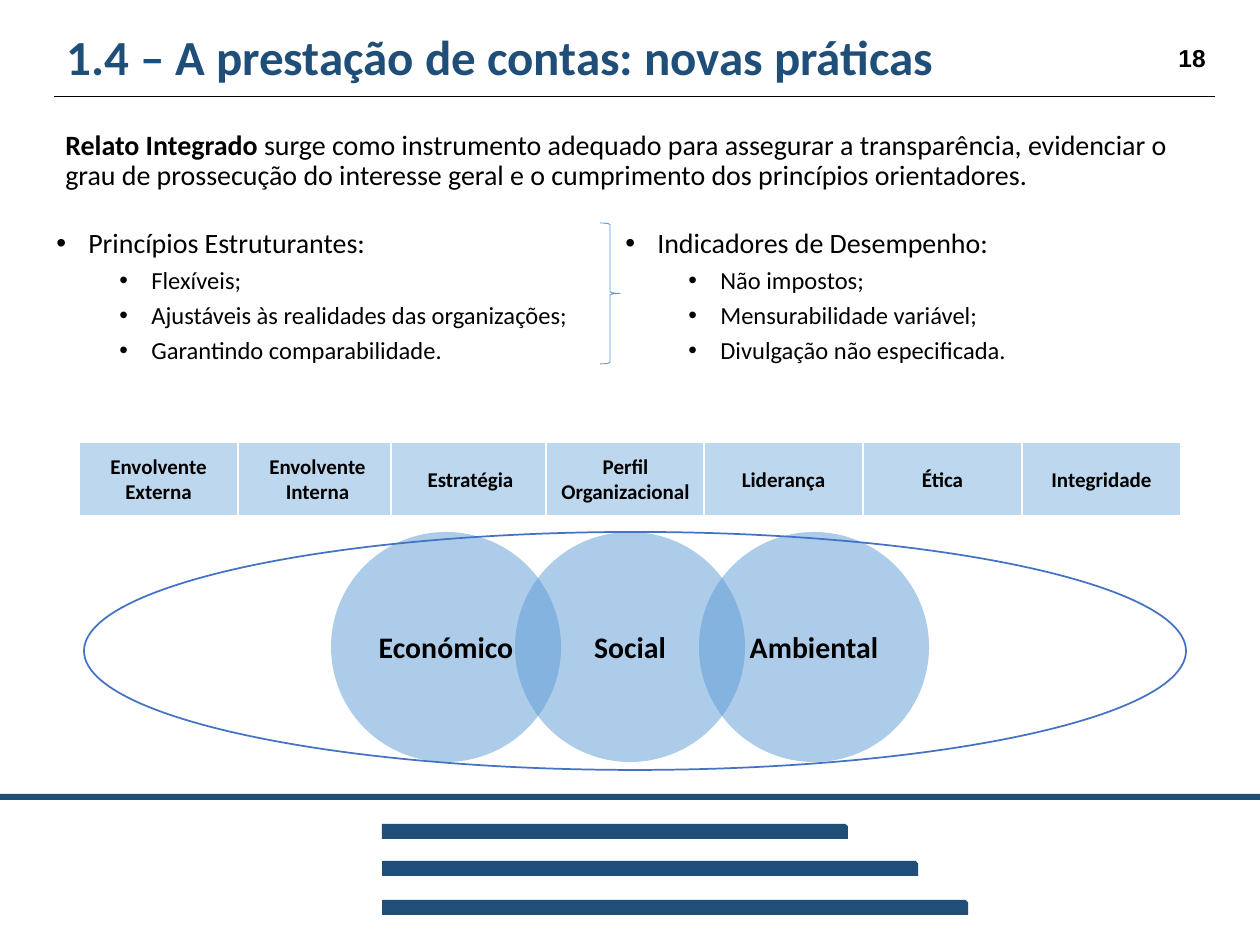
from dataclasses import dataclass

from lxml.etree import SubElement
from pptx import Presentation
from pptx.dml.color import RGBColor as Color
from pptx.enum.shapes import MSO_CONNECTOR as Connector, MSO_SHAPE as Shape
from pptx.enum.text import MSO_ANCHOR as Anchor, PP_ALIGN as Align
from pptx.oxml.ns import qn
from pptx.util import Emu, Pt


@dataclass(frozen=True)
class Theme:
    """Colours, fonts and type sizes of the slide."""
    navy: Color = Color.from_string("1F4E79")
    black: Color = Color.from_string("000000")
    white: Color = Color.from_string("FFFFFF")
    pale: Color = Color.from_string("BDD7EE")
    blue: Color = Color.from_string("5B9BD5")
    outline: Color = Color.from_string("4472C4")
    font: str = "Calibri"
    number_font: str = "Arial"
    title: int = 28
    circle: int = 17
    body: int = 16
    item: int = 14
    cell: int = 12


THEME = Theme()
EMU_PER_PX = 914400 / 126


def px(length):
    """Turn a length in px into EMU."""
    return Emu(round(length * EMU_PER_PX))


def style(paragraph, size, color=THEME.black, bold=None, font=THEME.font):
    """Set the font of a whole paragraph."""
    paragraph.font.name = font
    paragraph.font.size = Pt(size)
    paragraph.font.bold = bold
    paragraph.font.color.rgb = color


def add_shape(slide, kind, box, fill=None, line=None, width=1, alpha=None):
    """Add a preset shape without shadow."""
    shape = slide.shapes.add_shape(kind, *map(px, box))
    shape.shadow.inherit = False
    if fill is None:
        shape.fill.background()
    else:
        shape.fill.solid()
        shape.fill.fore_color.rgb = fill
    if alpha is not None:
        color = shape.fill._xPr.find(qn("a:solidFill"))[0]
        SubElement(color, qn("a:alpha")).set("val", str(alpha * 1000))
    if line is None:
        shape.line.fill.background()
    else:
        shape.line.color.rgb = line
        shape.line.width = Pt(width)
    return shape


def add_label(shape, text, size, wrap=True):
    """Centre a bold label in a shape."""
    frame = shape.text_frame
    frame.word_wrap = wrap
    frame.vertical_anchor = Anchor.MIDDLE
    paragraph = frame.paragraphs[0]
    paragraph.text = text
    paragraph.alignment = Align.CENTER
    style(paragraph, size, bold=True)


def add_text_frame(slide, box):
    """Add a wrapping text box and return its frame."""
    frame = slide.shapes.add_textbox(*map(px, box)).text_frame
    frame.word_wrap = True
    return frame


def add_footer(slide, left, top, width):
    """Draw the bottom band and its three bars."""
    add_shape(slide, Shape.RECTANGLE, (left, top, width, 6), THEME.navy)
    for offset, length in ((30, 466), (67, 536), (106, 586)):
        box = (left + 382, top + offset, length, 15)
        add_shape(slide, Shape.SNIP_1_RECTANGLE, box, THEME.navy)


def add_header(slide, left, top, width, height, title, number):
    """Place the title, the page number and the rule below them."""
    frame = add_text_frame(slide, (left, top, width, height))
    frame.vertical_anchor = Anchor.MIDDLE
    paragraph = frame.paragraphs[0]
    paragraph.text = title
    paragraph.line_spacing = 0.9
    style(paragraph, THEME.title, THEME.navy, True)

    frame = add_text_frame(slide, (left + width - 49, top + 11, 59, 43))
    frame.paragraphs[0].text = number
    style(frame.paragraphs[0], THEME.item, bold=True, font=THEME.number_font)

    ends = (left, top + height + 3, left + width, top + height + 3)
    rule = slide.shapes.add_connector(Connector.STRAIGHT, *map(px, ends))
    rule.line.color.rgb = THEME.black
    rule.line.width = Pt(0.5)
    SubElement(rule._element.spPr, qn("a:effectLst"))


def add_intro(slide, box, lead, text):
    """Place the paragraph with its bold lead."""
    paragraph = add_text_frame(slide, box).paragraphs[0]
    paragraph.line_spacing = 0.9
    style(paragraph, THEME.body)
    paragraph.add_run().text = lead
    paragraph.add_run().text = text
    paragraph.runs[0].font.bold = True


def add_bullets(slide, box, heading, items):
    """Place a bulleted heading with its indented items."""
    frame = add_text_frame(slide, box)
    for index, text in enumerate((heading, *items)):
        paragraph = frame.add_paragraph() if index else frame.paragraphs[0]
        paragraph.text = text
        paragraph.level = 1 if index else 0
        paragraph.line_spacing = 0.9
        paragraph.space_before = Pt(5 if index else 0)
        properties = paragraph._p.get_or_add_pPr()
        properties.set("marL", str(px(95 if index else 32)))
        properties.set("indent", str(px(-32)))
        SubElement(properties, qn("a:buFont")).set("typeface", "Arial")
        SubElement(properties, qn("a:buChar")).set("char", "•")
        style(paragraph, THEME.item if index else THEME.body)


def add_cells(slide, left, top, width, height, cells):
    """Draw the row of labelled cells at their offsets."""
    for offset, text in cells:
        box = (left + offset, top, width, height)
        cell = add_shape(slide, Shape.RECTANGLE, box, THEME.pale, THEME.white, 1.5)
        add_label(cell, text, THEME.cell)


def add_circles(slide, left, top, width, height, labels):
    """Draw overlapping circles centred within a wide ellipse."""
    diameter, pitch = 230, 184
    start = left + 247
    for index, text in enumerate(labels):
        box = (start + index * pitch, top, diameter, diameter)
        circle = add_shape(slide, Shape.OVAL, box, THEME.blue, alpha=50)
        add_label(circle, text, THEME.circle, wrap=False)
    add_shape(slide, Shape.OVAL, (left, top, width, height), line=THEME.outline)


def main():
    """Build and save the slide."""
    presentation = Presentation()
    presentation.slide_width, presentation.slide_height = px(1260), px(945)
    slide = presentation.slides.add_slide(presentation.slide_layouts[6])

    add_footer(slide, 0, 794, 1260)
    add_header(slide, 54, 26, 1161, 67,
               "1.4 – A prestação de contas: novas práticas", "18")
    add_intro(slide, (53, 125, 1162, 80), "Relato Integrado ",
              "surge como instrumento adequado para assegurar a transparência, "
              "evidenciar o grau de prossecução do interesse geral e o "
              "cumprimento dos princípios orientadores.")
    add_bullets(slide, (44, 223, 556, 150), "Princípios Estruturantes:",
                ("Flexíveis;", "Ajustáveis às realidades das organizações;",
                 "Garantindo comparabilidade."))
    add_bullets(slide, (613, 223, 568, 150), "Indicadores de Desempenho:",
                ("Não impostos;", "Mensurabilidade variável;",
                 "Divulgação não especificada."))
    add_shape(slide, Shape.RIGHT_BRACE, (600, 223, 20, 141),
              line=THEME.blue, width=0.5)
    add_cells(slide, 79, 442, 159, 74, (
        (0, "Envolvente Externa"), (159, "Envolvente Interna"),
        (312, "Estratégia"), (467, "Perfil Organizacional"),
        (625, "Liderança"), (784, "Ética"), (943, "Integridade")))
    add_circles(slide, 84, 532, 1102, 238, ("Económico", "Social", "Ambiental"))
    presentation.save("out.pptx")


if __name__ == "__main__":
    main()
